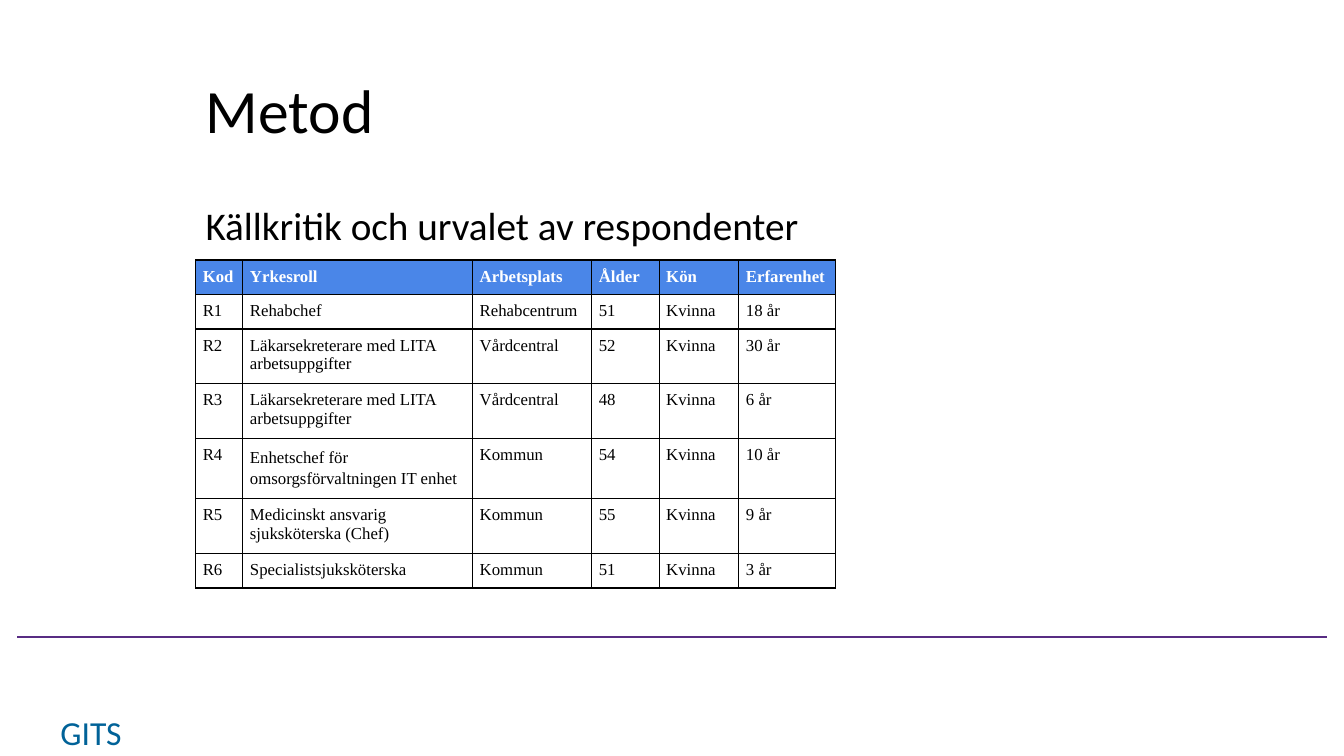
from dataclasses import dataclass

from lxml.etree import SubElement
from pptx import Presentation
from pptx.dml.color import RGBColor
from pptx.enum.shapes import MSO_CONNECTOR
from pptx.enum.text import MSO_ANCHOR, MSO_AUTO_SIZE, PP_ALIGN
from pptx.oxml.ns import qn
from pptx.util import Cm, Pt

COLORS = {
    "text": "000000",
    "header": "4A86E8",
    "header_text": "FFFFFF",
    "rule": "582C83",
    "footer": "006298",
}
LEFT, CONTENT_WIDTH = 4.93, 26.59
COLUMN_WIDTHS = (1.19, 5.79, 3.0, 1.7, 2.01, 2.44)
HEADERS = ("Kod", "Yrkesroll", "Arbetsplats", "Ålder", "Kön", "Erfarenhet")
CELL_MARGIN = Cm(0.18)


@dataclass
class Respondent:
    role: str
    workplace: str
    age: int
    years: int
    height: float = 1.3
    role_spacing: float = 1.0


RESPONDENTS = [
    Respondent("Rehabchef", "Rehabcentrum", 51, 18, height=0.82),
    Respondent("Läkarsekreterare med LITA arbetsuppgifter", "Vårdcentral", 52, 30),
    Respondent("Läkarsekreterare med LITA arbetsuppgifter", "Vårdcentral", 48, 6),
    Respondent("Enhetschef för omsorgsförvaltningen IT enhet", "Kommun", 54, 10,
               height=1.44, role_spacing=1.15),
    Respondent("Medicinskt ansvarig sjuksköterska (Chef)", "Kommun", 55, 9),
    Respondent("Specialistsjuksköterska", "Kommun", 51, 3, height=0.82),
]


def rgb(name: str) -> RGBColor:
    return RGBColor.from_string(COLORS[name])


def write(tf, text: str, size: float, color: str = "text", font: str = "Calibri",
          bold: bool = False, align=PP_ALIGN.LEFT, spacing: float = 1.0) -> None:
    p = tf.paragraphs[0]
    p.alignment = align
    p.line_spacing = spacing
    r = p.add_run()
    r.text = text
    r.font.size = Pt(size)
    r.font.name = font
    r.font.bold = bold
    r.font.color.rgb = rgb(color)


def add_borders(cell) -> None:
    tc_pr = cell._tc.get_or_add_tcPr()
    for side in ("lnL", "lnR", "lnT", "lnB"):
        ln = SubElement(tc_pr, qn(f"a:{side}"), w=str(Pt(1)))
        fill = SubElement(ln, qn("a:solidFill"))
        SubElement(fill, qn("a:srgbClr"), val=COLORS["text"])


def fill_cell(cell, text: str, header: bool = False, spacing: float = 1.0) -> None:
    cell.margin_left = cell.margin_right = CELL_MARGIN
    cell.margin_top = cell.margin_bottom = CELL_MARGIN
    add_borders(cell)
    if header:
        cell.fill.solid()
        cell.fill.fore_color.rgb = rgb("header")
    else:
        cell.fill.background()
    write(cell.text_frame, text, 12, "header_text" if header else "text",
          "Times New Roman", header, spacing=spacing)


def add_respondent_table(s) -> None:
    heights = [0.82] + [person.height for person in RESPONDENTS]
    table = s.shapes.add_table(
        len(heights), len(HEADERS), Cm(LEFT), Cm(6.55),
        Cm(sum(COLUMN_WIDTHS)), Cm(sum(heights))).table
    table.first_row = table.horz_banding = False
    for column, width in zip(table.columns, COLUMN_WIDTHS):
        column.width = Cm(width)
    for row, height in zip(table.rows, heights):
        row.height = Cm(height)

    for col, header in enumerate(HEADERS):
        fill_cell(table.cell(0, col), header, header=True)
    for row, person in enumerate(RESPONDENTS, start=1):
        values = (f"R{row}", person.role, person.workplace, str(person.age),
                  "Kvinna", f"{person.years} år")
        for col, value in enumerate(values):
            spacing = person.role_spacing if value == person.role else 1.0
            fill_cell(table.cell(row, col), value, spacing=spacing)


def main() -> None:
    prs = Presentation()
    prs.slide_width, prs.slide_height = Cm(33.87), Cm(19.05)
    s = prs.slides.add_slide(prs.slide_layouts[5])

    # Footer label and rule
    footer = s.shapes.add_textbox(Cm(1.19), Cm(17.81), Cm(2.21), Cm(1.27))
    write(footer.text_frame, "GITS", 24, "footer", align=PP_ALIGN.CENTER)
    rule = s.shapes.add_connector(
        MSO_CONNECTOR.STRAIGHT, Cm(0.43), Cm(16.05), Cm(33.45), Cm(16.05))
    rule.line.color.rgb = rgb("rule")
    rule.line.width = Pt(1)
    SubElement(rule._element.spPr, qn("a:effectLst"))

    # Title
    title = s.shapes.title
    title.left, title.top = Cm(LEFT), Cm(1.02)
    title.width, title.height = Cm(CONTENT_WIDTH), Cm(3.68)
    title.text_frame.auto_size = MSO_AUTO_SIZE.NONE
    title.text_frame.vertical_anchor = MSO_ANCHOR.MIDDLE
    write(title.text_frame, "Metod", 44, spacing=0.9)

    # Subheading
    body = s.shapes.add_textbox(Cm(LEFT), Cm(4.7), Cm(CONTENT_WIDTH), Cm(11))
    body.text_frame.word_wrap = True
    write(body.text_frame, "Källkritik och urvalet av respondenter", 28, spacing=1.2)

    # Respondents
    add_respondent_table(s)

    prs.save("out.pptx")


if __name__ == "__main__":
    main()
